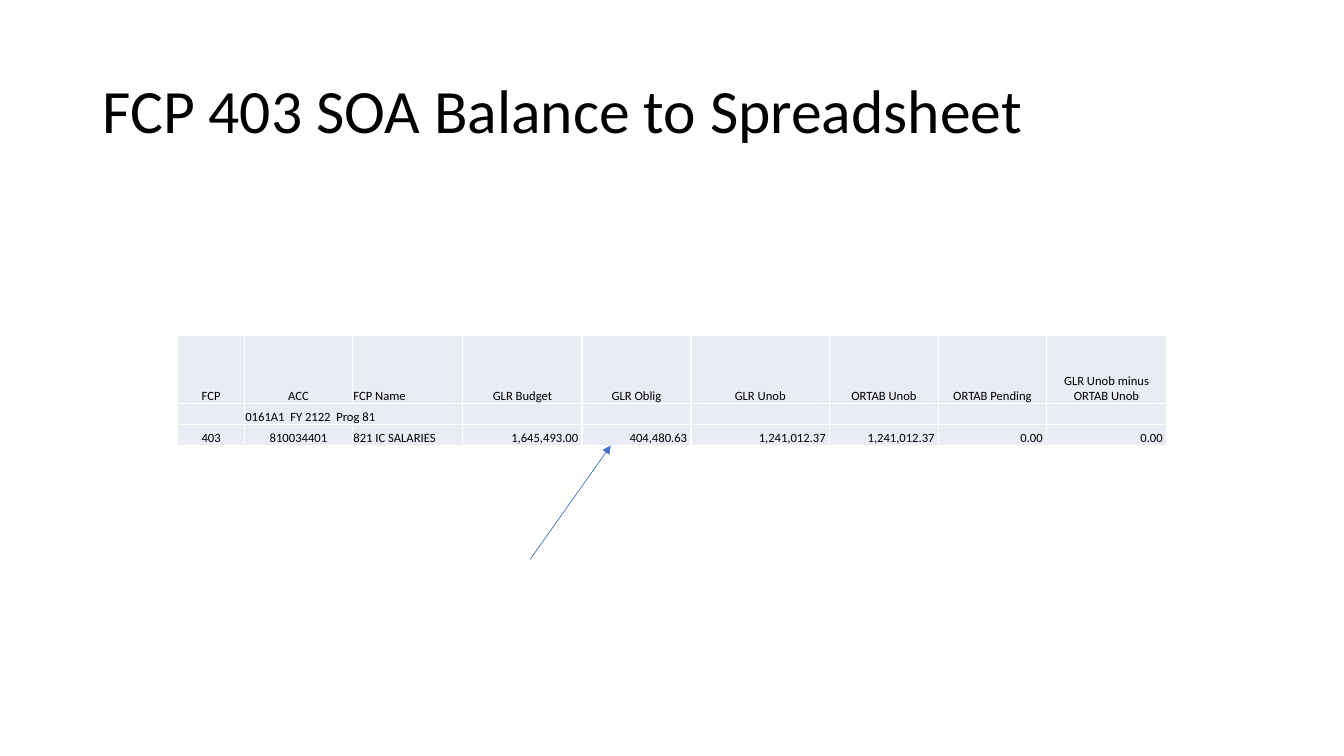
from lxml import etree
from pptx import Presentation
from pptx import util as u
from pptx.dml.color import RGBColor
from pptx.enum import shapes, text
from pptx.oxml import ns

COLORS = {"text": "000000", "cell": "E9EBF5", "border": "FFFFFF", "arrow": "4472C4"}
LEFT, CENTER, RIGHT = text.PP_ALIGN.LEFT, text.PP_ALIGN.CENTER, text.PP_ALIGN.RIGHT


def rgb(name):
    return RGBColor.from_string(COLORS[name])


def write(frame, words, size, font="Calibri", color="text", align=LEFT,
          anchor=text.MSO_ANCHOR.MIDDLE, spacing=None):
    frame.word_wrap = True
    frame.vertical_anchor = anchor
    para = frame.paragraphs[0]
    para.text = words
    para.alignment = align
    if spacing:
        para.line_spacing = spacing
    for span in para.runs:
        span.font.name = font
        span.font.size = u.Pt(size)
        span.font.color.rgb = rgb(color)


class SlideBuilder:
    cell_size = 9
    margins = {"margin_left": 0.7, "margin_top": 0.7, "margin_right": 0.7, "margin_bottom": 0}

    def __init__(self, page):
        self.page = page

    def title(self, words, left, top, width, height):
        box = self.page.shapes.title
        box.left, box.top, box.width, box.height = map(u.Pt, (left, top, width, height))
        write(box.text_frame, words, 44, spacing=0.9)

    def cell(self, cell, words, align):
        for side, size in self.margins.items():
            setattr(cell, side, u.Pt(size))
        write(cell.text_frame, words, self.cell_size, align=align)
        cell.vertical_anchor = text.MSO_ANCHOR.BOTTOM
        if not words:
            # An empty cell needs its own text size to keep the row low
            end = etree.SubElement(cell.text_frame.paragraphs[0]._p, ns.qn("a:endParaRPr"))
            end.set("sz", str(self.cell_size * 100))
        # Borders come before the fill
        properties = cell._tc.get_or_add_tcPr()
        for side in "LRTB":
            line = etree.SubElement(properties, ns.qn(f"a:ln{side}"), w=str(u.Pt(1)))
            fill = etree.SubElement(line, ns.qn("a:solidFill"))
            etree.SubElement(fill, ns.qn("a:srgbClr"), val=COLORS["border"])
        cell.fill.solid()
        cell.fill.fore_color.rgb = rgb("cell")

    def table(self, rows, aligns, left, top, widths, heights):
        frame = self.page.shapes.add_table(
            len(rows), len(widths), u.Pt(left), u.Pt(top),
            u.Pt(sum(widths)), u.Pt(sum(heights)))
        table = frame.table
        for column, width in zip(table.columns, widths):
            column.width = u.Pt(width)
        for row, height in zip(table.rows, heights):
            row.height = u.Pt(height)
        for r, (words_in_row, row_aligns) in enumerate(zip(rows, aligns)):
            for c, (words, align) in enumerate(zip(words_in_row, row_aligns)):
                self.cell(table.cell(r, c), words, align)
        return table

    def arrow(self, start, end, color="arrow", width=0.5):
        line = self.page.shapes.add_connector(
            shapes.MSO_CONNECTOR.STRAIGHT, *map(u.Pt, (*start, *end)))
        line.line.color.rgb = rgb(color)
        line.line.width = u.Pt(width)
        etree.SubElement(line.line._get_or_add_ln(), ns.qn("a:tailEnd"), type="triangle")
        etree.SubElement(line._element.spPr, ns.qn("a:effectLst"))


def main():
    deck = Presentation()
    deck.slide_width, deck.slide_height = u.Pt(960), u.Pt(540)
    builder = SlideBuilder(deck.slides.add_slide(deck.slide_layouts[5]))

    # Title
    builder.title("FCP 403 SOA Balance to Spreadsheet", 66, 28.75, 828, 104.4)

    # Balance table
    rows = [
        ["FCP", "ACC", "FCP Name", "GLR Budget", "GLR Oblig", "GLR Unob",
         "ORTAB Unob", "ORTAB Pending", "GLR Unob minus\nORTAB Unob"],
        ["", "0161A1  FY 2122  Prog 81"] + [""] * 7,
        ["403", "810034401", "821 IC SALARIES", "1,645,493.00 ", "404,480.63 ",
         "1,241,012.37 ", "1,241,012.37 ", "0.00 ", "0.00 "],
    ]
    aligns = [
        [CENTER, CENTER, LEFT] + [CENTER] * 6,
        [LEFT] * 9,
        [CENTER, CENTER, LEFT] + [RIGHT] * 6,
    ]
    widths = [47.6, 77.2, 78.8, 85.2, 77.8, 99, 77.8, 77.2, 85.8]
    table = builder.table(rows, aligns, 127, 239.8, widths, [48.6, 15.1, 15.1])
    table.cell(1, 1).merge(table.cell(1, 2))

    # Arrow to the obligated amount
    builder.arrow((378.7, 399.6), (436.3, 318.2))

    deck.save("out.pptx")


if __name__ == "__main__":
    main()
